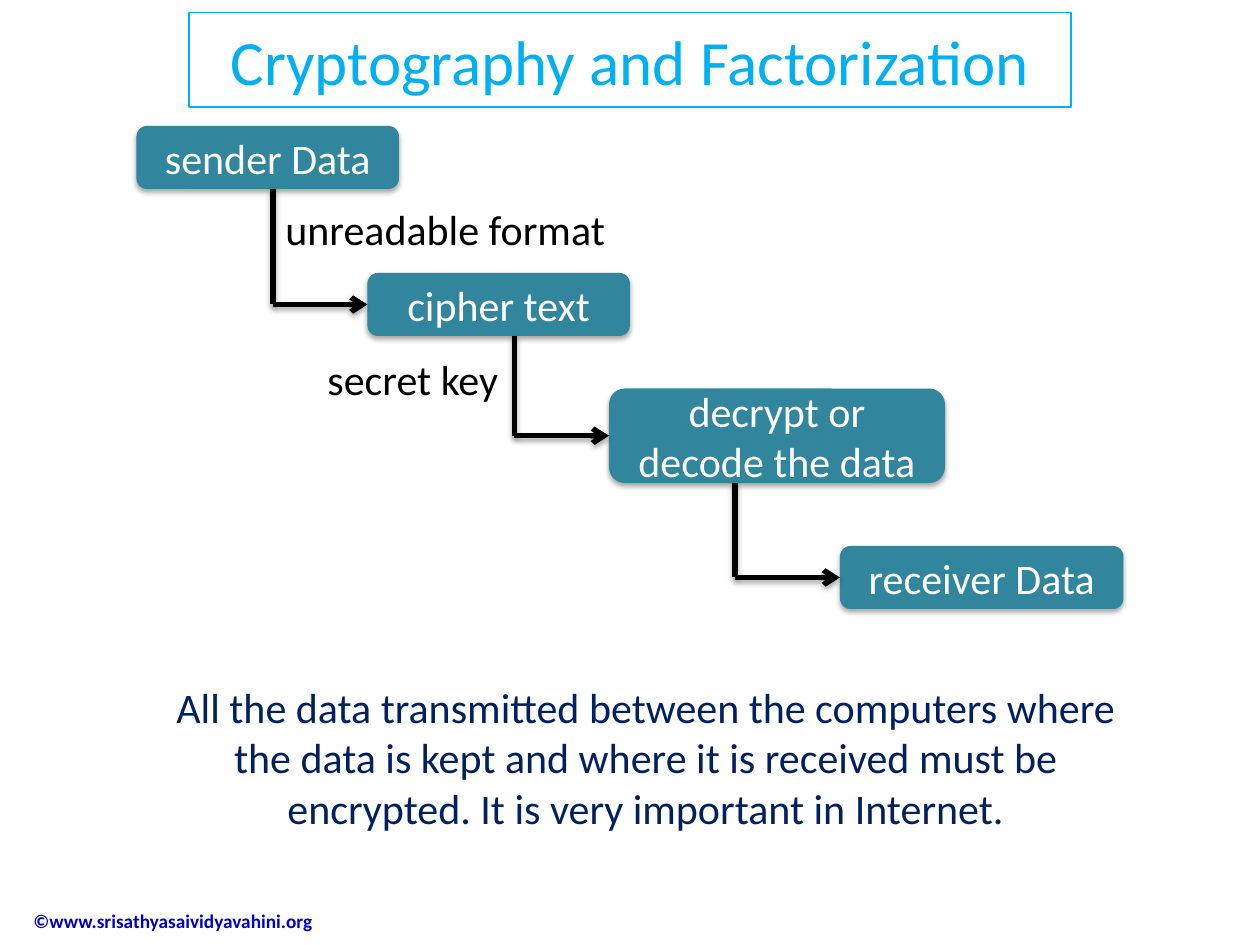
from lxml.etree import SubElement
from pptx import Presentation
from pptx.dml.color import RGBColor
from pptx.enum.shapes import MSO_CONNECTOR as Connector, MSO_SHAPE as Preset
from pptx.enum.text import MSO_ANCHOR as Anchor, MSO_AUTO_SIZE as AutoSize, PP_ALIGN as Align
from pptx.oxml import parse_xml
from pptx.oxml.ns import nsdecls, qn
from pptx.util import Inches, Pt

TITLE_ONLY = 5
LEFT_SIDE = 1
SHADOW = (
    f'<a:effectLst {nsdecls("a")}>'
    '<a:outerShdw blurRad="40000" dist="23000" dir="5400000" rotWithShape="0">'
    '<a:srgbClr val="000000"><a:alpha val="35000"/></a:srgbClr>'
    '</a:outerShdw></a:effectLst>'
)


def color(hex_code):
    return RGBColor.from_string(hex_code)


def cells(*counts):
    """Turn counts of grid cells, twelve to the inch, into lengths."""
    return [Inches(count / 12) for count in counts]


class FlowSlide:
    font_name = "Calibri"
    box_fill = "31859C"
    box_text = "FFFFFF"
    accent = "00B0F0"
    ink = "000000"

    def __init__(self, presentation):
        self.slide = presentation.slides.add_slide(
            presentation.slide_layouts[TITLE_ONLY])
        self.shapes = self.slide.shapes

    def add_words(self, shape, text, size, hex_code, align=None, bold=False):
        paragraph = shape.text_frame.paragraphs[0]
        paragraph.alignment = align
        run = paragraph.add_run()
        run.text = text
        run.font.name = self.font_name
        run.font.size = Pt(size)
        run.font.bold = bold
        run.font.color.rgb = color(hex_code)

    def title(self, text, left, top, width, height):
        title = self.shapes.title
        title.left, title.top, title.width, title.height = cells(left, top, width, height)
        geometry = SubElement(title.element.spPr, qn("a:prstGeom"),
                              prst="round2DiagRect")
        SubElement(geometry, qn("a:avLst"))
        title.fill.background()
        title.line.color.rgb = color(self.accent)
        title.line.width = Pt(0.75)
        title.text_frame.auto_size = AutoSize.NONE
        title.text_frame.vertical_anchor = Anchor.MIDDLE
        self.add_words(title, text, 36, self.accent, Align.CENTER)

    def box(self, text, left, top, width, height):
        box = self.shapes.add_shape(Preset.ROUNDED_RECTANGLE,
                                    *cells(left, top, width, height))
        box.fill.solid()
        box.fill.fore_color.rgb = color(self.box_fill)
        box.line.fill.background()
        box.element.spPr.append(parse_xml(SHADOW))
        box.text_frame.word_wrap = True
        box.text_frame.vertical_anchor = Anchor.MIDDLE
        self.add_words(box, text, 24, self.box_text, Align.CENTER)
        return box

    def line(self, x1, y1, x2, y2):
        line = self.shapes.add_connector(Connector.STRAIGHT, x1, y1, x2, y2)
        line.line.color.rgb = color(self.ink)
        line.line.width = Pt(3)
        line.element.spPr.append(parse_xml(SHADOW))
        return line

    def step(self, source, target, column):
        """Lead down from the source, then right into the target's left side."""
        x, = cells(column)
        y = target.top + target.height // 2
        self.line(x, source.top + source.height, x, y)
        arrow = self.line(x, y, target.left, y)
        arrow.end_connect(target, LEFT_SIDE)
        SubElement(arrow.element.spPr.find(qn("a:ln")), qn("a:tailEnd"), type="arrow")

    def text(self, text, left, top, width, height, size=24, hex_code=ink,
             align=None, wrap=False, bold=False):
        box = self.shapes.add_textbox(*cells(left, top, width, height))
        box.text_frame.word_wrap = wrap
        self.add_words(box, text, size, hex_code, align, bold)
        return box

    def footer(self, text, left, top, width, height):
        footer = self.text(text, left, top, width, height, size=11,
                           hex_code="0000CC", wrap=True, bold=True)
        footer.text_frame.vertical_anchor = Anchor.MIDDLE
        properties = footer.text_frame.paragraphs[0]._p.get_or_add_pPr()
        properties.set("marL", str(Inches(0.5)))


def main():
    presentation = Presentation()
    presentation.slide_width, presentation.slide_height = cells(120, 90)
    page = FlowSlide(presentation)

    page.title("Cryptography and Factorization", 18, 1.2, 84, 9)

    sender = page.box("sender Data", 13, 12, 25, 6)
    cipher = page.box("cipher text", 35, 26, 25, 6)
    decrypt = page.box("decrypt or decode the data", 58, 37, 32, 9)
    receiver = page.box("receiver Data", 80, 52, 27, 6)

    page.step(sender, cipher, 26)
    page.step(cipher, decrypt, 49)
    page.step(decrypt, receiver, 70)

    page.text("unreadable format", 26, 18.8, 34, 6)
    page.text("secret key", 30, 33.1, 19.8, 6)
    page.text(
        "All the data transmitted between the computers where the data is kept "
        "and where it is received must be encrypted. "
        "It is very important in Internet.",
        15.5, 64.3, 92, 15.7, hex_code="002060", align=Align.CENTER, wrap=True)
    page.footer("©www.srisathyasaividyavahini.org", -4, 85.2, 36.2, 4.9)

    presentation.save("out.pptx")


if __name__ == "__main__":
    main()
